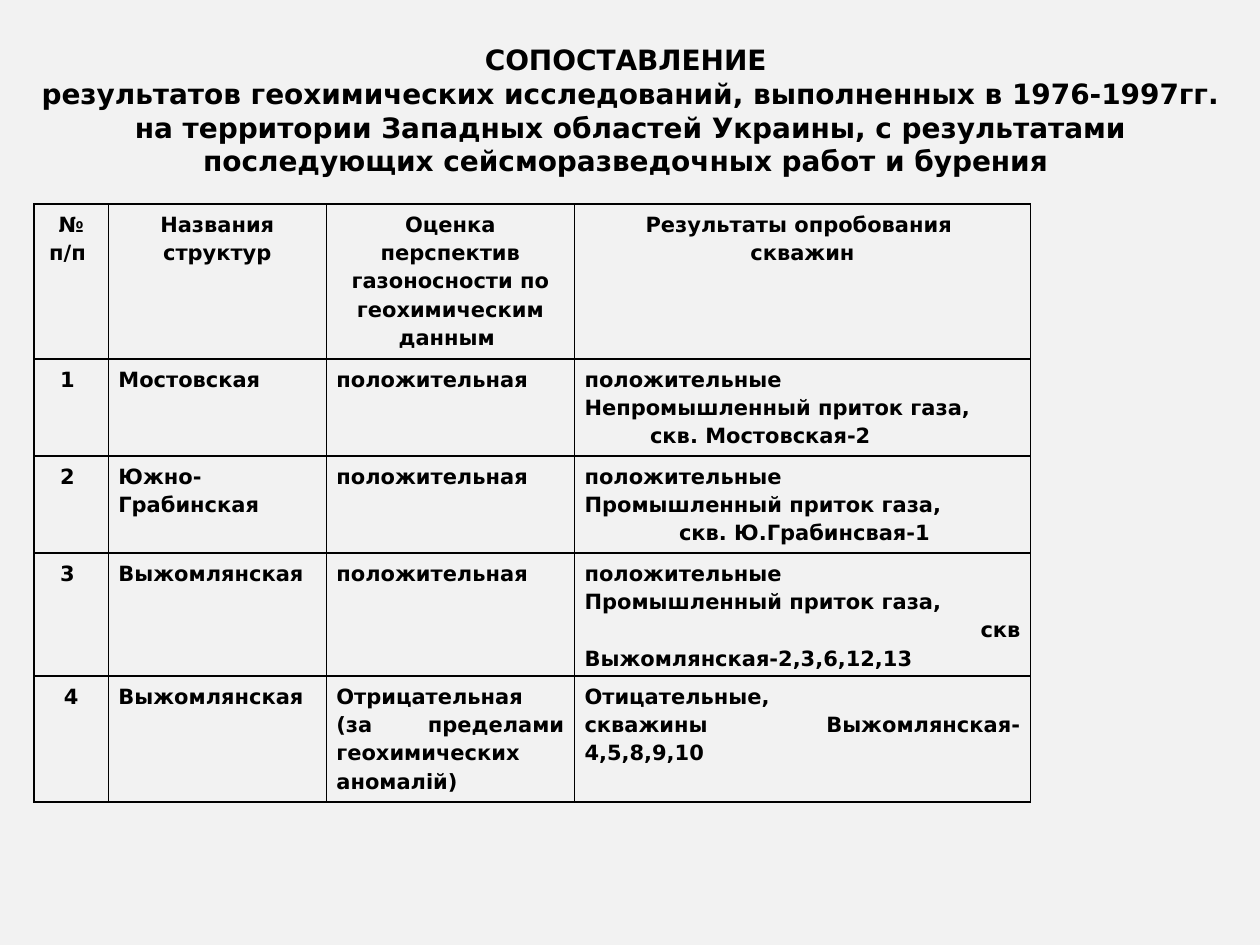
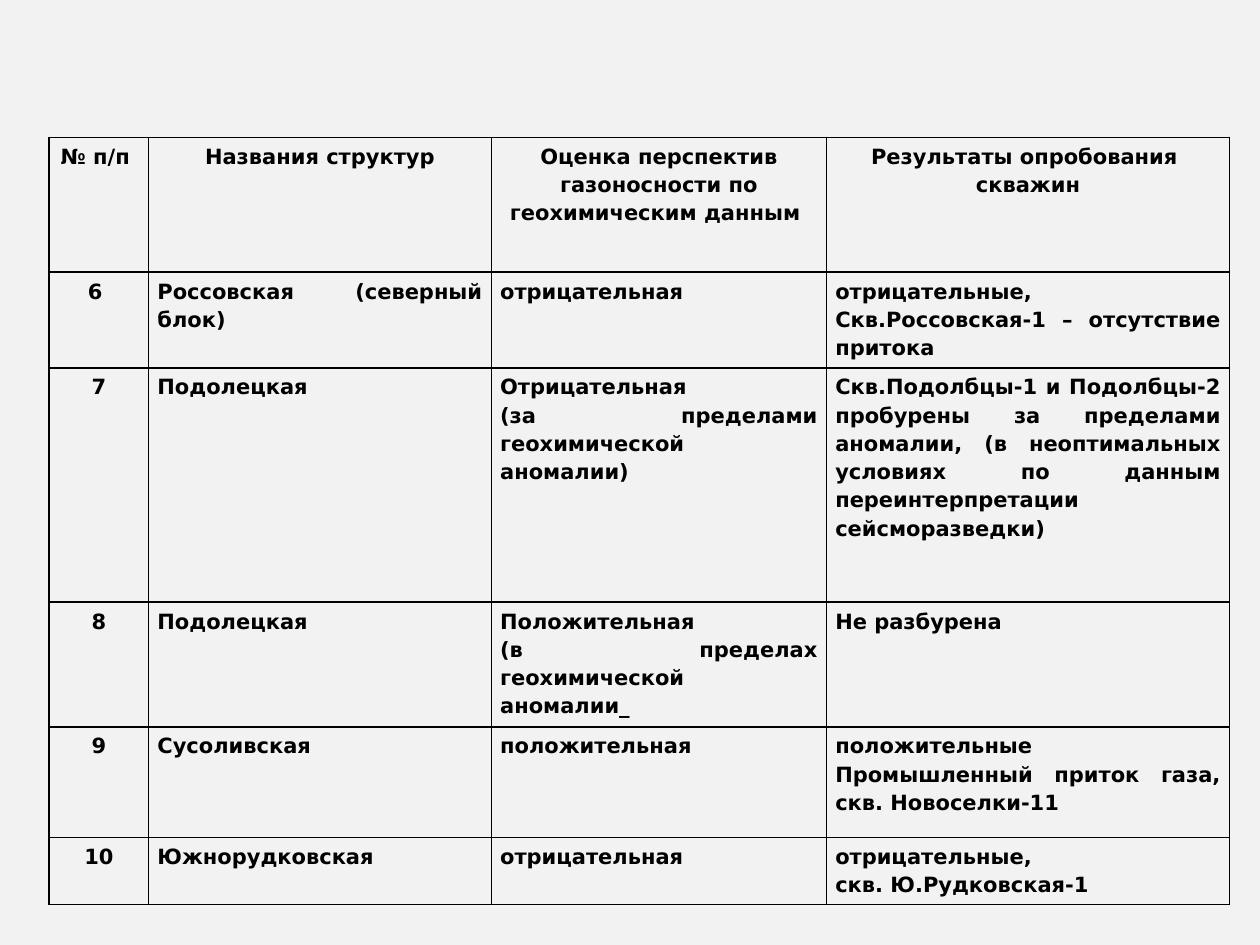
from dataclasses import dataclass

from lxml import etree
from pptx import Presentation
from pptx.dml.color import RGBColor
from pptx.enum.text import MSO_ANCHOR, MSO_AUTO_SIZE, PP_ALIGN
from pptx.oxml.ns import qn
from pptx.util import Emu, Inches, Pt

# Shared look
BACKGROUND = RGBColor(0xF2, 0xF2, 0xF2)
INK = RGBColor(0x00, 0x00, 0x00)
FONT = "DejaVu Sans"
TITLE_SIZE, TABLE_SIZE = Pt(16), Pt(12)
TABLE_SPACING = 1.15
BORDER = Pt(1)
CENTER, JUSTIFY, RIGHT = PP_ALIGN.CENTER, PP_ALIGN.JUSTIFY, PP_ALIGN.RIGHT
TOP, NO_RESIZE = MSO_ANCHOR.TOP, MSO_AUTO_SIZE.NONE
SLIDE_WIDTH, SLIDE_HEIGHT = Inches(10), Inches(7.5)
TITLE_ONLY, BLANK = 5, 6


@dataclass(frozen=True)
class Line:
    """One paragraph; the indent is a percentage of the slide width."""
    text: str
    align: int = JUSTIFY
    indent: float = 0


@dataclass(frozen=True)
class WellTable:
    """Positions and sizes are percentages of the slide's width and height."""
    left: float
    top: float
    columns: tuple[float, ...]
    rows: tuple[float, ...]
    side_inset: float
    edge_inset: float
    records: tuple[tuple, ...]


def across(percent: float) -> Emu:
    return Emu(round(SLIDE_WIDTH * percent / 100))


def down(percent: float) -> Emu:
    return Emu(round(SLIDE_HEIGHT * percent / 100))


TITLE_LINES = (
    "СОПОСТАВЛЕНИЕ ",
    "результатов геохимических исследований, выполненных в 1976-1997гг. "
    "на территории Западных областей Украины, с результатами",
    "последующих сейсморазведочных работ и бурения ",
)

# Cells hold a string, or a tuple of paragraphs
HEADER = (
    "№ п/п ",
    "Названия структур",
    "Оценка перспектив газоносности по геохимическим данным ",
    ("Результаты опробования ", "скважин"),
)

FIRST_TABLE = WellTable(
    left=2.7, top=21.6,
    columns=(5.9, 17.3, 19.7, 36.2),
    rows=(16.4, 10.27, 10.27, 11.87, 13.33),
    side_inset=0.8, edge_inset=0.53,
    records=(
        ("1 ", "Мостовская", "положительная",
         ("положительные", "Непромышленный приток газа,",
          Line("скв. Мостовская-2", indent=5.2))),
        ("2 ", "Южно-Грабинская", "положительная",
         ("положительные", "Промышленный приток газа,",
          Line("скв. Ю.Грабинсвая-1", indent=7.5))),
        ("3 ", "Выжомлянская", "положительная",
         ("положительные", "Промышленный приток газа,",
          Line("скв", RIGHT), "Выжомлянская-2,3,6,12,13")),
        ("4", "Выжомлянская",
         ("Отрицательная", "(за пределами геохимических аномалій)"),
         ("Отицательные,", "скважины Выжомлянская- 4,5,8,9,10")),
    ),
)

SECOND_TABLE = WellTable(
    left=3.9, top=14.53,
    columns=(7.9, 27.2, 26.6, 32),
    rows=(14.27, 10.13, 24.8, 13.2, 11.73, 7.07),
    side_inset=0.7, edge_inset=0.4,
    records=(
        ("6 ", "Россовская (северный блок)", "отрицательная",
         ("отрицательные,", "Скв.Россовская-1 – отсутствие притока")),
        ("7", "Подолецкая",
         ("Отрицательная", "(за пределами геохимической аномалии)"),
         "Скв.Подолбцы-1 и Подолбцы-2 пробурены за пределами аномалии, "
         "(в неоптимальных условиях по данным переинтерпретации "
         "сейсморазведки)"),
        ("8", "Подолецкая",
         ("Положительная", "(в пределах геохимической аномалии_"),
         "Не разбурена"),
        ("9", "Сусоливская", "положительная",
         ("положительные", "Промышленный приток газа, скв. Новоселки-11")),
        ("10", "Южнорудковская", "отрицательная",
         ("отрицательные,", "скв. Ю.Рудковская-1")),
    ),
)


def write_lines(text_frame, lines: list[Line], size: Pt, spacing: float) -> None:
    for index, line in enumerate(lines):
        paragraph = text_frame.add_paragraph() if index else text_frame.paragraphs[0]
        paragraph.alignment = line.align
        paragraph.line_spacing = spacing
        paragraph.space_before = paragraph.space_after = Pt(0)
        if line.indent:
            paragraph._p.get_or_add_pPr().set("marL", str(across(line.indent)))
        run = paragraph.add_run()
        run.text = line.text
        run.font.name = FONT
        run.font.size = size
        run.font.bold = True
        run.font.color.rgb = INK


def add_borders(cell) -> None:
    properties = cell._tc.get_or_add_tcPr()
    for side in ("lnL", "lnR", "lnT", "lnB"):
        border = etree.SubElement(properties, qn(f"a:{side}"), w=str(BORDER))
        fill = etree.SubElement(border, qn("a:solidFill"))
        etree.SubElement(fill, qn("a:srgbClr"), val=str(INK))


def add_title(slide) -> None:
    title = slide.shapes.title
    title.left, title.top = across(2), down(3.87)
    title.width, title.height = across(96.1), down(19.6)
    text_frame = title.text_frame
    text_frame.word_wrap = True
    text_frame.auto_size = NO_RESIZE
    text_frame.vertical_anchor = TOP
    write_lines(text_frame, [Line(text, CENTER) for text in TITLE_LINES], TITLE_SIZE, 1)


def add_well_table(slide, layout: WellTable) -> None:
    table = slide.shapes.add_table(
        len(layout.rows), len(layout.columns),
        across(layout.left), down(layout.top),
        across(sum(layout.columns)), down(sum(layout.rows)),
    ).table
    table.first_row = table.horz_banding = False
    for column, width in zip(table.columns, layout.columns):
        column.width = across(width)
    for row, height in zip(table.rows, layout.rows):
        row.height = down(height)

    for row_index, record in enumerate((HEADER, *layout.records)):
        for column_index, content in enumerate(record):
            cell = table.cell(row_index, column_index)
            cell.margin_left = cell.margin_right = across(layout.side_inset)
            cell.margin_top = cell.margin_bottom = down(layout.edge_inset)
            add_borders(cell)
            cell.fill.background()
            # Header row and number column are centred
            align = CENTER if row_index == 0 or column_index == 0 else JUSTIFY
            parts = (content,) if isinstance(content, str) else content
            lines = [part if isinstance(part, Line) else Line(part, align) for part in parts]
            write_lines(cell.text_frame, lines, TABLE_SIZE, TABLE_SPACING)


def main() -> None:
    presentation = Presentation()
    presentation.slide_width, presentation.slide_height = SLIDE_WIDTH, SLIDE_HEIGHT
    background = presentation.slide_master.background.fill
    background.solid()
    background.fore_color.rgb = BACKGROUND

    # Slide 1: title and structures 1 to 4
    slide = presentation.slides.add_slide(presentation.slide_layouts[TITLE_ONLY])
    add_title(slide)
    add_well_table(slide, FIRST_TABLE)

    # Slide 2: structures 6 to 10
    slide = presentation.slides.add_slide(presentation.slide_layouts[BLANK])
    add_well_table(slide, SECOND_TABLE)

    presentation.save("out.pptx")


if __name__ == "__main__":
    main()
